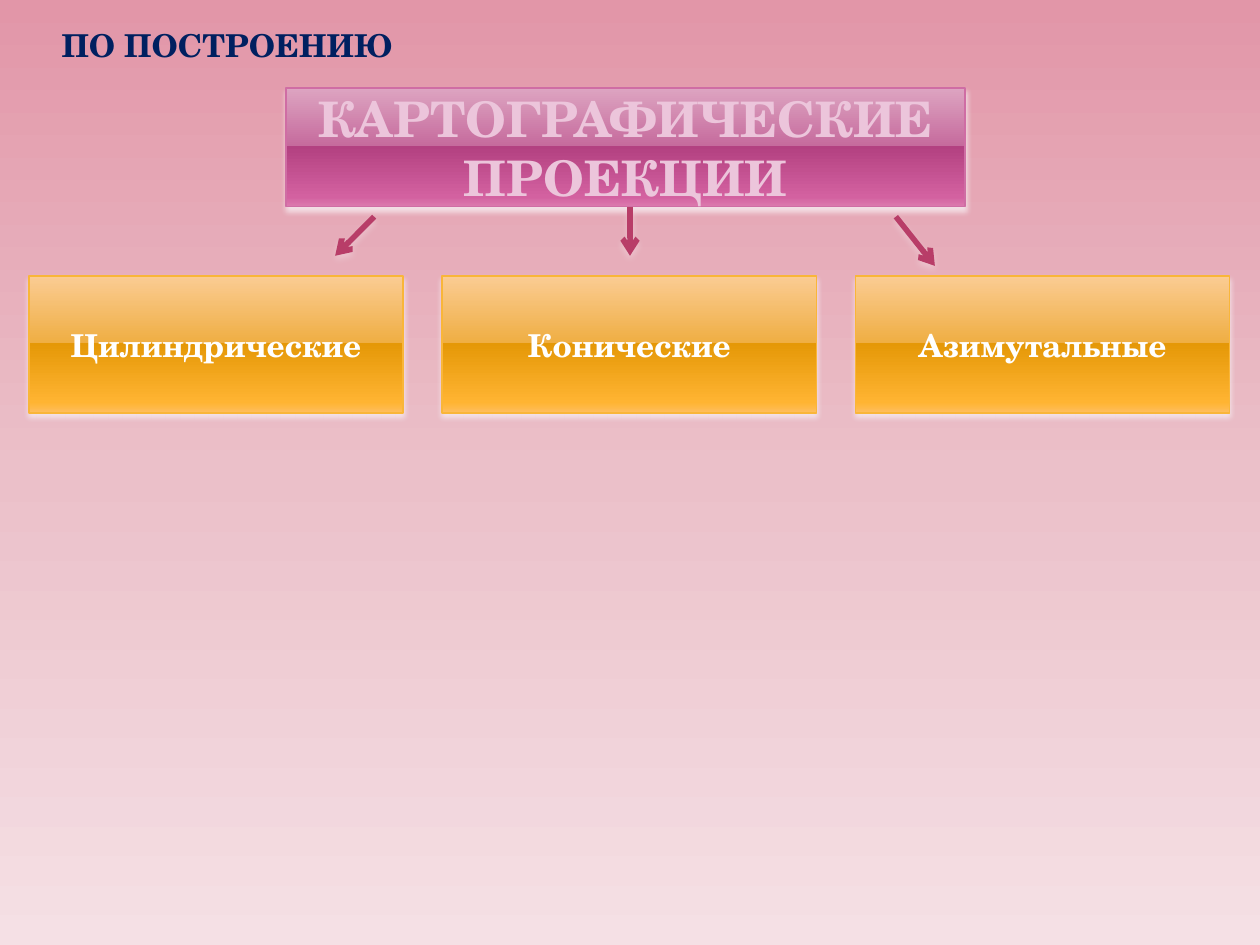
from lxml.etree import SubElement
from pptx import Presentation
from pptx.dml.color import RGBColor
from pptx.enum.shapes import MSO_CONNECTOR as Connector, MSO_SHAPE as Shape
from pptx.enum.text import MSO_ANCHOR as Anchor, MSO_AUTO_SIZE as AutoSize, PP_ALIGN as Align
from pptx.oxml.ns import qn
from pptx.util import Inches, Pt

FONT = "TeX Gyre Schola"
COLORS = {
    "heading": "002060",
    "title_text": "ECC5DB",
    "title_line": "CF6DA4",
    "type_text": "FFFFFF",
    "type_line": "F9B639",
    "arrow": "B83D68",
    "shadow": "F7EAEF",
}
GRADIENTS = {
    "page": [(0, "E296A8"), (50, "EBC0C9"), (100, "F5E0E5")],
    "title": [(0, "DDA4C1"), (49, "C66B9D"), (49, "B34181"), (92, "D361A0"), (100, "DC79AE")],
    "type": [(0, "FBCC93"), (49, "EFAE43"), (49, "E59807"), (92, "FFB432"), (100, "FFBE5F")],
}


class SlideBuilder:
    def __init__(self, page):
        self.page = page

    def color(self, name):
        return RGBColor.from_string(COLORS[name])

    def gradient(self, fill, owner, name):
        """Fill from top to bottom with the named stops."""
        fill.gradient()
        fill.gradient_angle = 270
        stops = owner.find(".//" + qn("a:gsLst"))
        for stop in list(stops):
            stops.remove(stop)
        for percent, value in GRADIENTS[name]:
            stop = SubElement(stops, qn("a:gs"), pos=str(percent * 1000))
            SubElement(stop, qn("a:srgbClr"), val=value)

    def background(self, name):
        self.gradient(self.page.background.fill, self.page.element, name)

    def shadow(self, item, blur, alpha):
        effects = SubElement(item.element.spPr, qn("a:effectLst"))
        outer = SubElement(effects, qn("a:outerShdw"), blurRad=str(Pt(blur)),
                           dist=str(Pt(2)), dir="5400000", rotWithShape="0")
        tone = SubElement(outer, qn("a:srgbClr"), val=COLORS["shadow"])
        SubElement(tone, qn("a:alpha"), val=str(alpha * 1000))

    def set_text(self, box, text, size, color, align):
        box.text_frame.word_wrap = True
        para = box.text_frame.paragraphs[0]
        para.text = text
        para.alignment = align
        para.font.name = FONT
        para.font.size = Pt(size)
        para.font.bold = True
        para.font.color.rgb = self.color(color)

    def heading(self, text, left, top, width, height):
        box = self.page.shapes.add_textbox(*map(Inches, (left, top, width, height)))
        self.set_text(box, text, 18, "heading", Align.LEFT)
        box.text_frame.auto_size = AutoSize.SHAPE_TO_FIT_TEXT

    def panel(self, text, left, top, width, height, style, size):
        box = self.page.shapes.add_shape(
            Shape.RECTANGLE, *map(Inches, (left, top, width, height)))
        self.gradient(box.fill, box.element.spPr, style)
        box.line.color.rgb = self.color(style + "_line")
        box.line.width = Pt(0.9)
        self.shadow(box, 3.1, 83)
        self.set_text(box, text, size, style + "_text", Align.CENTER)
        box.text_frame.vertical_anchor = Anchor.MIDDLE
        return box

    def arrow(self, start, end):
        line = self.page.shapes.add_connector(
            Connector.STRAIGHT, *map(Inches, (*start, *end)))
        line.line.color.rgb = self.color("arrow")
        line.line.width = Pt(3.15)
        SubElement(line.element.spPr.find(qn("a:ln")), qn("a:tailEnd"), type="arrow")
        self.shadow(line, 4, 38)


def main():
    deck = Presentation()
    deck.slide_width, deck.slide_height = Inches(10), Inches(7.5)
    builder = SlideBuilder(deck.slides.add_slide(deck.slide_layouts[6]))
    builder.background("page")

    # Heading and title
    builder.heading("ПО ПОСТРОЕНИЮ", 0.39, 0.16, 6.09, 0.4)
    title = builder.panel("КАРТОГРАФИЧЕСКИЕ ПРОЕКЦИИ", 2.27, 0.7, 5.39, 0.94, "title", 28)
    frame = title.text_frame
    frame.vertical_anchor = Anchor.BOTTOM
    frame.margin_left = frame.margin_right = Inches(0.05)
    frame.margin_top = frame.margin_bottom = 0

    # Projection types in equal columns
    for column, name in enumerate(("Цилиндрические", "Конические", "Азимутальные")):
        builder.panel(name, 0.23 + column * 3.28, 2.19, 2.97, 1.09, "type", 18)

    # Arrows from the title to the types
    for start, end in (((2.97, 1.72), (2.66, 2.03)),
                       ((7.11, 1.72), (7.42, 2.11)),
                       ((5, 1.64), (5, 2.03))):
        builder.arrow(start, end)

    deck.save("out.pptx")


if __name__ == "__main__":
    main()
